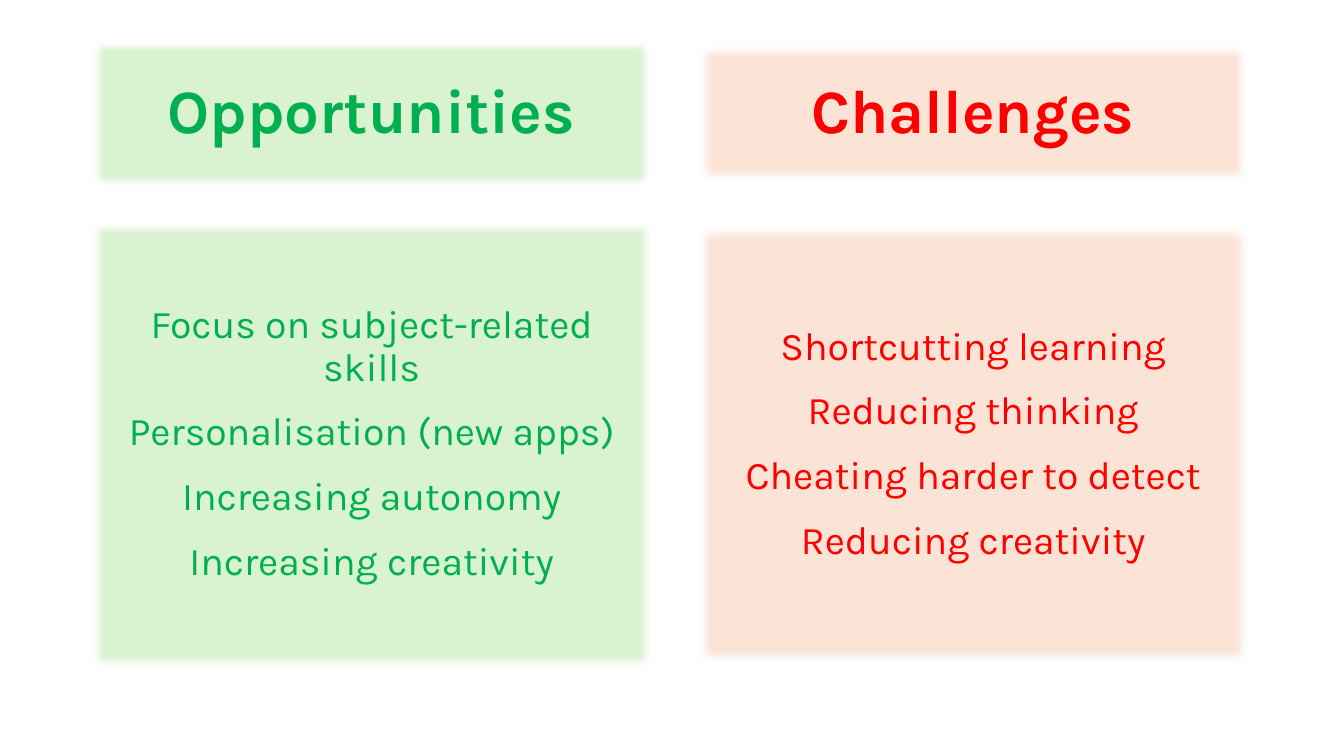
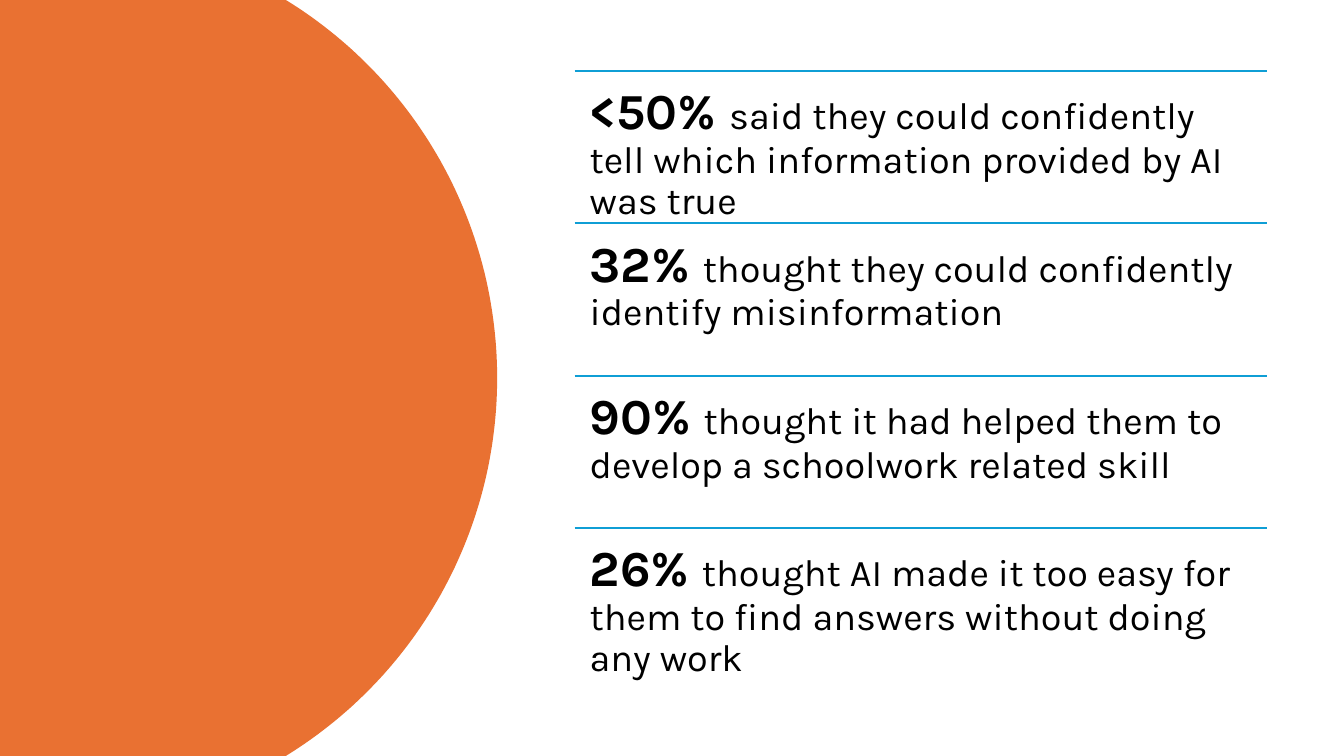
import math

from lxml import etree
from pptx import Presentation
from pptx.dml.color import RGBColor
from pptx.enum import shapes, text
from pptx.oxml.ns import qn
from pptx.util import Cm, Pt

GREEN, PALE_GREEN = "00B050", "D9F2D0"
RED, PALE_RED = "FF0000", "FBE3D6"
ORANGE, BLUE, BLACK = "E97132", "0F9ED5", "000000"

PANEL_WIDTH = 14.05
HEADING_TOP, HEADING_HEIGHT = 1.02, 3.68
LIST_TOP, LIST_HEIGHT = 5.61, 11.18

OPPORTUNITIES = [
    "Focus on subject-related skills",
    "Personalisation (new apps)",
    "Increasing autonomy",
    "Increasing creativity",
]
CHALLENGES = [
    "Shortcutting learning",
    "Reducing thinking",
    "Cheating harder to detect",
    "Reducing creativity",
]
FINDINGS = [
    ("<50%", "said they could confidently tell which information provided by AI was true"),
    ("32%", "thought they could confidently identify misinformation"),
    ("90%", "thought it had helped them to develop a schoolwork related skill"),
    ("26%", "thought AI made it too easy for them to find answers without doing any work"),
]


def color(value):
    return RGBColor.from_string(value)


class Deck:
    font_name = "Karla"
    line_spacing = 0.9

    def __init__(self, width, height):
        self.presentation = Presentation()
        self.presentation.slide_width = Cm(width)
        self.presentation.slide_height = Cm(height)
        self.slide = None

    def add_slide(self, layout):
        self.slide = self.presentation.slides.add_slide(
            self.presentation.slide_layouts.get_by_name(layout))

    def style_font(self, font, size, ink, bold=False):
        font.name = self.font_name
        font.size = Pt(size)
        font.bold = bold
        font.color.rgb = color(ink)

    def fill(self, shape, paint):
        shape.fill.solid()
        shape.fill.fore_color.rgb = color(paint)
        shape.line.fill.background()
        shape.shadow.inherit = False

    def rectangle(self):
        return self.slide.shapes.add_shape(shapes.MSO_SHAPE.RECTANGLE, 0, 0, Cm(1), Cm(1))

    def panel(self, shape, left, top, height, lines, size, ink, paint, edge, bold=False):
        shape.left, shape.top = Cm(left), Cm(top)
        shape.width, shape.height = Cm(PANEL_WIDTH), Cm(height)
        self.fill(shape, paint)
        effects = shape._element.spPr.find(qn("a:effectLst"))
        etree.SubElement(effects, qn("a:softEdge"), rad=str(Pt(edge)))
        frame = shape.text_frame
        frame.text = "\n".join(lines)
        frame.word_wrap = True
        frame.auto_size = text.MSO_AUTO_SIZE.NONE
        frame.vertical_anchor = text.MSO_ANCHOR.MIDDLE
        for index, paragraph in enumerate(frame.paragraphs):
            properties = paragraph._p.get_or_add_pPr()
            properties.set("marL", "0")
            properties.set("indent", "0")
            etree.SubElement(properties, qn("a:buNone"))
            paragraph.alignment = text.PP_ALIGN.CENTER
            paragraph.line_spacing = self.line_spacing
            paragraph.space_before = Pt(16 if index else 0)
            paragraph.space_after = Pt(0)
            self.style_font(paragraph.font, size, ink, bold)

    def column(self, heading, body, left, title, lines, ink, paint, edge):
        self.panel(heading, left, HEADING_TOP, HEADING_HEIGHT, [title], 44, ink, paint, edge, True)
        self.panel(body, left, LIST_TOP, LIST_HEIGHT, lines, 28, ink, paint, edge)

    def cut_circle(self, center_x, radius, paint, steps=120):
        height = self.presentation.slide_height
        middle = height / 2
        limit = math.asin(middle / Cm(radius))
        angles = [limit * (2 * step / steps - 1) for step in range(steps + 1)]
        arc = [(Cm(center_x) + Cm(radius) * math.cos(angle),
                middle + Cm(radius) * math.sin(angle)) for angle in angles]
        builder = self.slide.shapes.build_freeform(0, 0)
        builder.add_line_segments(arc + [(0, height)], close=True)
        self.fill(builder.convert_to_shape(), paint)

    def rule(self, left, top, width):
        connector = self.slide.shapes.add_connector(
            shapes.MSO_CONNECTOR.STRAIGHT, Cm(left), Cm(top), Cm(left + width), Cm(top))
        connector.line.color.rgb = color(BLUE)
        connector.line.width = Pt(1.5)
        etree.SubElement(connector._element.spPr, qn("a:effectLst"))

    def finding(self, left, top, width, height, share, statement):
        self.rule(left, top, width)
        frame = self.slide.shapes.add_textbox(
            Cm(left), Cm(top), Cm(width), Cm(height)).text_frame
        frame.word_wrap = True
        frame.margin_left = frame.margin_right = Cm(0.38)
        frame.margin_top = frame.margin_bottom = Cm(0.38)
        paragraph = frame.paragraphs[0]
        paragraph.line_spacing = self.line_spacing
        for words, size, bold in ((share + " ", 36, True), (statement, 27, False)):
            run = paragraph.add_run()
            run.text = words
            self.style_font(run.font, size, BLACK, bold)


def main():
    deck = Deck(33.87, 19.05)

    deck.add_slide("Title and Content")
    title, body = deck.slide.shapes.title, deck.slide.placeholders[1]
    deck.column(title, body, 2.34, "Opportunities", OPPORTUNITIES, GREEN, PALE_GREEN, 5)
    deck.column(deck.rectangle(), deck.rectangle(), 17.5, "Challenges", CHALLENGES,
                RED, PALE_RED, 7)

    deck.add_slide("Blank")
    deck.cut_circle(1.35, 11.18, ORANGE)
    row_height = 3.84
    for row, (share, statement) in enumerate(FINDINGS):
        deck.finding(14.48, 1.79 + row * row_height, 17.46, row_height, share, statement)

    deck.presentation.save("out.pptx")


if __name__ == "__main__":
    main()
